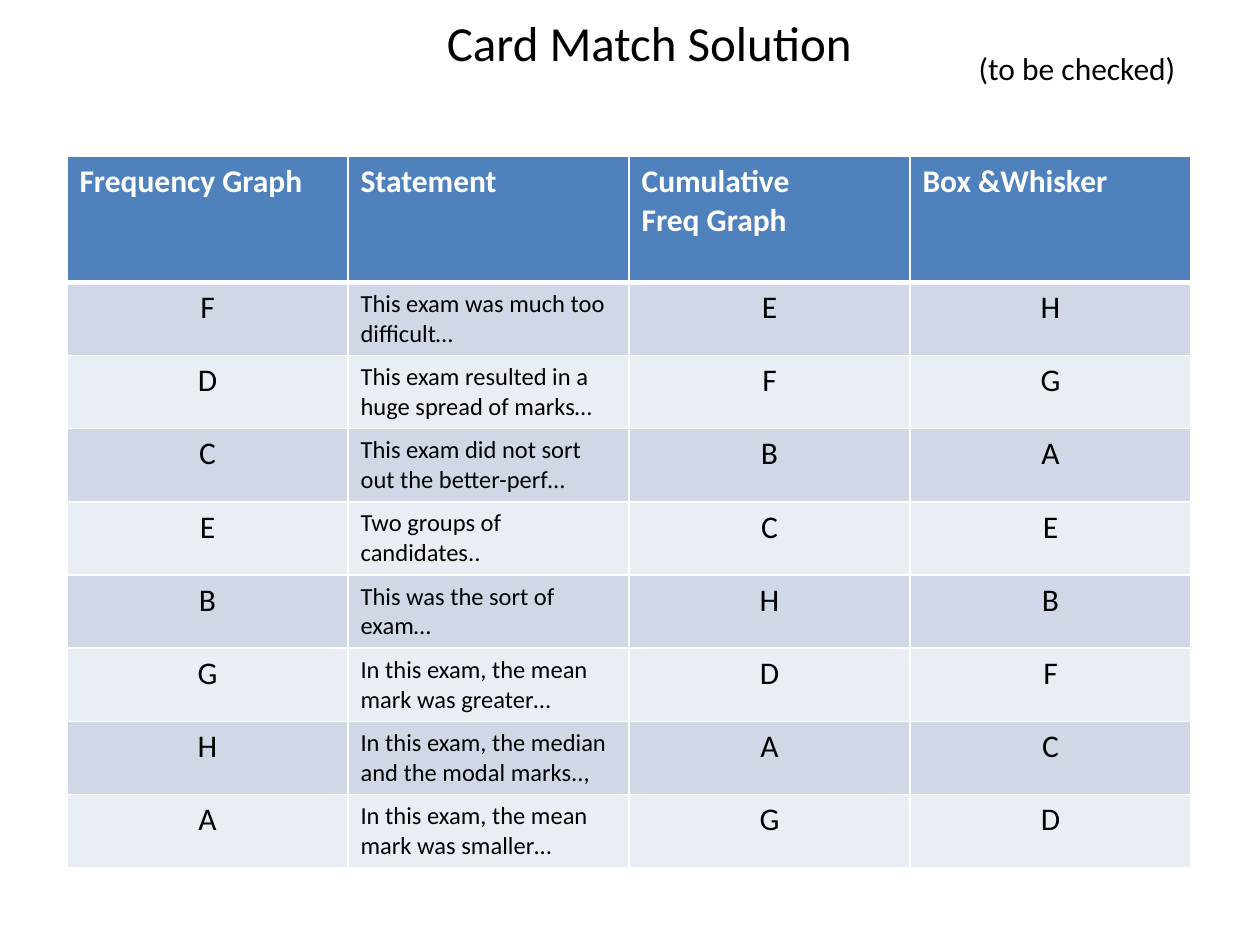
from lxml.etree import SubElement
from pptx import Presentation
from pptx.dml.color import RGBColor
from pptx.enum.text import MSO_ANCHOR as Anchor, MSO_AUTO_SIZE as AutoSize, PP_ALIGN as Align
from pptx.oxml.ns import qn
from pptx.util import Cm, Pt

COLORS = {
    "text": "000000",
    "header_text": "FFFFFF",
    "header": "4F81BD",
    "odd_row": "D0D8E8",
    "even_row": "E9EDF4",
    "border": "FFFFFF",
}


def add_text(paragraph, text, size, color="text", bold=False):
    run = paragraph.add_run()
    run.text = text
    run.font.name = "Calibri"
    run.font.size = Pt(size)
    run.font.bold = bold
    run.font.color.rgb = RGBColor.from_string(COLORS[color])


def add_border(cell, side, points):
    line = SubElement(cell._tc.get_or_add_tcPr(), qn(f"a:ln{side}"), w=str(Pt(points)))
    fill = SubElement(line, qn("a:solidFill"))
    SubElement(fill, qn("a:srgbClr"), val=COLORS["border"])


presentation = Presentation()
presentation.slide_width = Cm(25.4)
presentation.slide_height = Cm(19.05)
slide = presentation.slides.add_slide(presentation.slide_layouts[6])

headings = [
    ("Card Match Solution", 28, 8.76, 0.13, 8.76, 1.45),
    ("(to be checked)", 18, 19.48, 0.86, 4.52, 1.02),
]
for text, size, left, top, width, height in headings:
    text_box = slide.shapes.add_textbox(Cm(left), Cm(top), Cm(width), Cm(height))
    text_box.text_frame.word_wrap = False
    text_box.text_frame.auto_size = AutoSize.SHAPE_TO_FIT_TEXT
    add_text(text_box.text_frame.paragraphs[0], text, size)

rows = [
    ("Frequency Graph", "Statement", "Cumulative\nFreq Graph", "Box &Whisker"),
    ("F", "This exam was much too difficult…", "E", "H"),
    ("D", "This exam resulted in a huge spread of marks…", "F", "G"),
    ("C", "This exam did not sort out the better-perf…", "B", "A"),
    ("E", "Two groups of candidates..", "C", "E"),
    ("B", "This was the sort of exam…", "H", "B"),
    ("G", "In this exam, the mean mark was greater…", "D", "F"),
    ("H", "In this exam, the median and the modal marks..,", "A", "C"),
    ("A", "In this exam, the mean mark was smaller…", "G", "D"),
]
header_height, row_height = 2.54, 1.475
table_height = header_height + row_height * (len(rows) - 1)
table = slide.shapes.add_table(
    len(rows), len(rows[0]), Cm(1.35), Cm(3.15), Cm(22.66), Cm(table_height)
).table

for row_index, values in enumerate(rows):
    is_header = row_index == 0
    table.rows[row_index].height = Cm(header_height if is_header else row_height)
    row_fill = "header" if is_header else ("odd_row" if row_index % 2 else "even_row")
    for column_index, value in enumerate(values):
        cell = table.cell(row_index, column_index)
        is_statement = column_index == 1 and not is_header
        for side in "LRTB":
            below_header = (row_index, side) in [(0, "B"), (1, "T")]
            add_border(cell, side, 3 if below_header else 1)
        cell.fill.solid()
        cell.fill.fore_color.rgb = RGBColor.from_string(COLORS[row_fill])
        cell.vertical_anchor = Anchor.MIDDLE if is_statement else Anchor.TOP
        for line_index, text in enumerate(value.split("\n")):
            frame = cell.text_frame
            paragraph = frame.add_paragraph() if line_index else frame.paragraphs[0]
            paragraph.alignment = Align.LEFT if is_header or is_statement else Align.CENTER
            add_text(
                paragraph,
                text,
                14 if is_statement else 18,
                "header_text" if is_header else "text",
                is_header,
            )

presentation.save("out.pptx")
